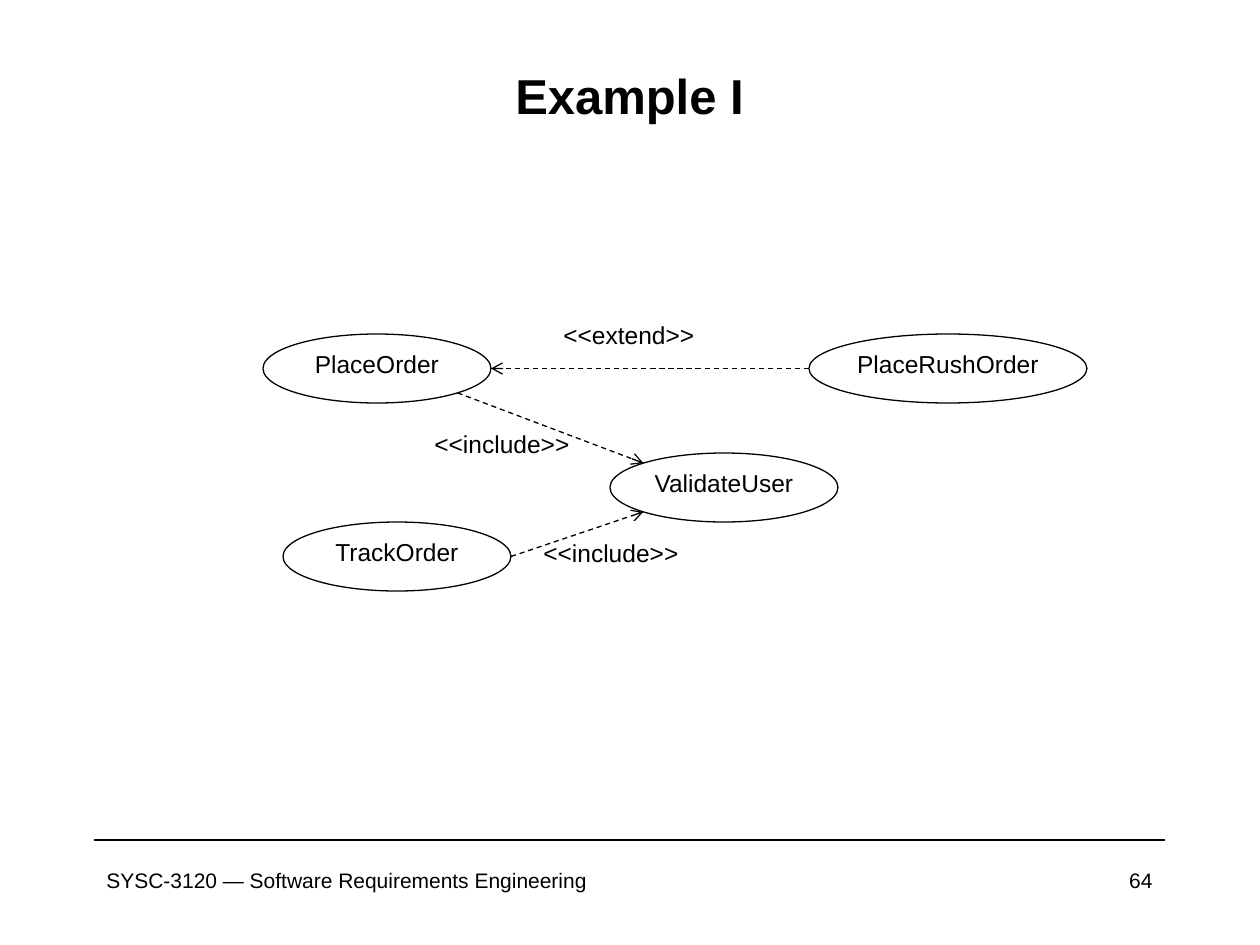
from lxml import etree
from math import sqrt
from pptx import Presentation
from pptx.dml.color import RGBColor
from pptx.enum.dml import MSO_LINE
from pptx.enum.shapes import MSO_CONNECTOR, MSO_SHAPE
from pptx.enum.text import MSO_ANCHOR, PP_ALIGN
from pptx.oxml.ns import qn
from pptx.util import Emu, Pt

BLACK = RGBColor(0, 0, 0)
FONT = "Arial"
LEFT, CENTER, RIGHT = PP_ALIGN.LEFT, PP_ALIGN.CENTER, PP_ALIGN.RIGHT
TOP, MIDDLE = MSO_ANCHOR.TOP, MSO_ANCHOR.MIDDLE
ELLIPSE, STRAIGHT, DASH = MSO_SHAPE.OVAL, MSO_CONNECTOR.STRAIGHT, MSO_LINE.DASH
PX_PER_INCH = 126
DIAGONAL = 1 / sqrt(2)


def px(length):
    return Emu(round(length * 914400 / PX_PER_INCH))


def write(shape, text, size, align=LEFT, anchor=TOP, bold=False, wrap=True):
    frame = shape.text_frame
    frame.text = text
    frame.word_wrap = wrap
    frame.vertical_anchor = anchor
    paragraph = frame.paragraphs[0]
    paragraph.alignment = align
    font = paragraph.runs[0].font
    font.name, font.size, font.bold = FONT, Pt(size), bold
    font.color.rgb = BLACK


def add_text(slide, box, text, size, **style):
    shape = slide.shapes.add_textbox(*map(px, box))
    write(shape, text, size, **style)


def add_line(slide, start, end, width):
    line = slide.shapes.add_connector(STRAIGHT, *map(px, (*start, *end)))
    line.line.color.rgb = BLACK
    line.line.width = Pt(width)
    etree.SubElement(line._element.spPr, qn("a:effectLst"))
    return line


def add_dependency(slide, start, end):
    """Dashed line with an open arrowhead at its end."""
    line = add_line(slide, start, end, 0.75)
    line.line.dash_style = DASH
    etree.SubElement(line.line._get_or_add_ln(), qn("a:tailEnd"), type="arrow")


def add_use_case(slide, box, name):
    shape = slide.shapes.add_shape(ELLIPSE, *map(px, box))
    shape.shadow.inherit = False
    shape.fill.background()
    shape.line.color.rgb = BLACK
    shape.line.width = Pt(0.75)
    write(shape, name, 14, align=CENTER)
    frame = shape.text_frame
    frame.margin_left = frame.margin_right = px(5)
    frame.margin_top = frame.margin_bottom = px(5)


def rim(box, across, down):
    """Point on an ellipse, in half-widths and half-heights from its centre."""
    left, top, width, height = box
    return left + width * (1 + across) / 2, top + height * (1 + down) / 2


def add_use_case_diagram(slide, box):
    left, top = box[:2]
    width, height = 228, 69
    place = (left, top + 20, width, height)
    rush = (left + 546, top + 20, 278, height)
    validate = (left + 347, top + 139, width, height)
    track = (left + 20, top + 208, width, height)

    # Use cases
    for case, name in ((place, "PlaceOrder"), (rush, "PlaceRushOrder"),
                       (validate, "ValidateUser"), (track, "TrackOrder")):
        add_use_case(slide, case, name)

    # Dependencies
    add_dependency(slide, rim(rush, -1, 0), rim(place, 1, 0))
    add_dependency(slide, rim(place, DIAGONAL, DIAGONAL),
                   rim(validate, -DIAGONAL, -DIAGONAL))
    add_dependency(slide, rim(track, 1, 0), rim(validate, -DIAGONAL, DIAGONAL))

    # Stereotypes
    for x, y, text in ((288, 0, "<<extend>>"), (159, 109, "<<include>>"),
                       (268, 218, "<<include>>")):
        add_text(slide, (left + x, top + y, 161, 43), text, 14, wrap=False)


def add_footer(slide, box):
    left, top, width, height = box
    add_line(slide, (left, top), (left + width, top), 1)
    text_top, text_height = top + 21, height - 21
    add_text(slide, (left, text_top, 536, text_height),
             "SYSC-3120 — Software Requirements Engineering", 12)
    add_text(slide, (left + width - 262, text_top, 262, text_height),
             "64", 12, align=RIGHT)


def main():
    presentation = Presentation()
    presentation.slide_width, presentation.slide_height = px(1260), px(945)
    slide = presentation.slides.add_slide(presentation.slide_layouts[6])
    add_text(slide, (44, 58, 1171, 73), "Example I", 28,
             align=CENTER, anchor=MIDDLE, bold=True)
    add_use_case_diagram(slide, (263, 314, 824, 277))
    add_footer(slide, (94, 840, 1071, 84))
    presentation.save("out.pptx")


if __name__ == "__main__":
    main()
